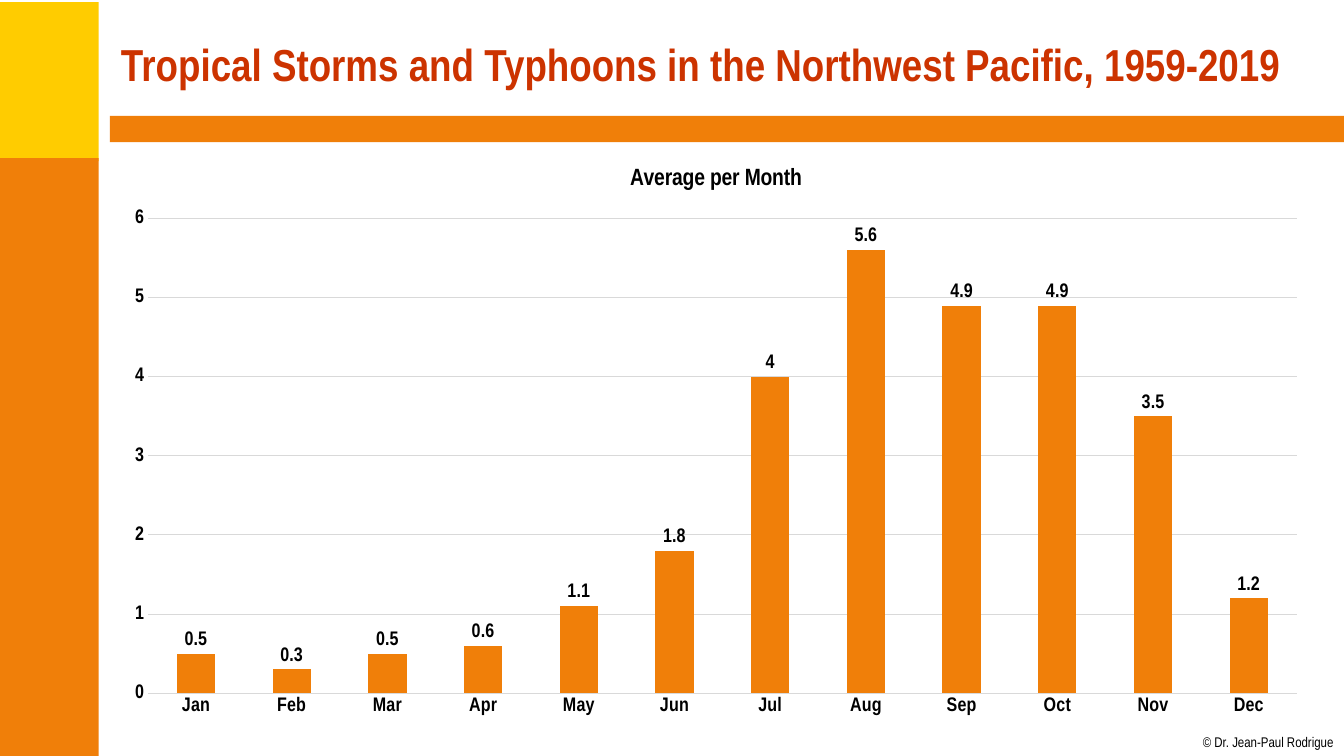
"""Build a slide charting average monthly storms in the Northwest Pacific."""
from dataclasses import dataclass

from pptx import Presentation
from pptx import util as u
from pptx.chart.data import CategoryChartData
from pptx.dml.color import RGBColor
from pptx.enum import chart as ch
from pptx.enum import shapes, text


@dataclass(frozen=True)
class Theme:
    font: str = "Arial Narrow"
    yellow: RGBColor = RGBColor(0xFF, 0xCC, 0x00)
    orange: RGBColor = RGBColor(0xF0, 0x7F, 0x09)
    red: RGBColor = RGBColor(0xCC, 0x33, 0x00)
    black: RGBColor = RGBColor(0, 0, 0)
    grid: RGBColor = RGBColor(0xD9, 0xD9, 0xD9)
    title_size: float = 32
    chart_title_size: float = 16.8
    chart_size: float = 14
    credit_size: float = 10


theme = Theme()


def style(font, size, color, bold=True):
    font.name = theme.font
    font.size = u.Pt(size)
    font.bold = bold
    font.color.rgb = color


deck = Presentation()
deck.slide_width, deck.slide_height = u.Inches(13.33), u.Inches(7.5)
page = deck.slides.add_slide(deck.slide_layouts[5])

bands = [
    (-0.02, 0.02, 1, 1.58, theme.yellow),
    (-0.02, 1.57, 1, 5.93, theme.orange),
    (1.09, 1.15, 12.24, 0.26, theme.orange),
]
for *place, color in bands:
    band = page.shapes.add_shape(shapes.MSO_SHAPE.RECTANGLE, *map(u.Inches, place))
    band.shadow.inherit = False
    band.fill.solid()
    band.fill.fore_color.rgb = color
    band.line.fill.background()

credit = page.shapes.add_textbox(*map(u.Inches, (11.93, 7.28, 1.31, 0.17)))
frame = credit.text_frame
frame.margin_left = frame.margin_right = frame.margin_top = frame.margin_bottom = 0
frame.word_wrap = False
frame.auto_size = text.MSO_AUTO_SIZE.SHAPE_TO_FIT_TEXT
frame.text = "© Dr. Jean-Paul Rodrigue"
style(frame.paragraphs[0].font, theme.credit_size, theme.black, bold=False)

title = page.shapes.title
title.left, title.top, title.width, title.height = map(u.Inches, (1.1, 0.11, 12, 1.04))
title.text_frame.text = "Tropical Storms and Typhoons in the Northwest Pacific, 1959-2019"
title.text_frame.auto_size = text.MSO_AUTO_SIZE.NONE
title.text_frame.vertical_anchor = text.MSO_ANCHOR.MIDDLE
heading = title.text_frame.paragraphs[0]
heading.alignment = text.PP_ALIGN.LEFT
style(heading.font, theme.title_size, theme.red)

storms = CategoryChartData()
storms.categories = ["Jan", "Feb", "Mar", "Apr", "May", "Jun",
                     "Jul", "Aug", "Sep", "Oct", "Nov", "Dec"]
storms.add_series("Average per Month",
                  [0.5, 0.3, 0.5, 0.6, 1.1, 1.8, 4, 5.6, 4.9, 4.9, 3.5, 1.2])
chart = page.shapes.add_chart(ch.XL_CHART_TYPE.COLUMN_CLUSTERED,
                              *map(u.Inches, (1.1, 1.43, 12, 5.79)), storms).chart
style(chart.font, theme.chart_size, theme.black)
chart.has_legend = False
chart.has_title = True
chart.chart_title.include_in_layout = False
chart.chart_title.text_frame.text = "Average per Month"
style(chart.chart_title.text_frame.paragraphs[0].font, theme.chart_title_size, theme.black)

months, counts = chart.category_axis, chart.value_axis
for axis in (months, counts):
    axis.major_tick_mark = axis.minor_tick_mark = ch.XL_TICK_MARK.NONE
    style(axis.tick_labels.font, theme.chart_size, theme.black)
counts.minimum_scale, counts.maximum_scale, counts.major_unit = 0, 6, 1
counts.has_major_gridlines = True
counts.format.line.fill.background()
for line in (months.format.line, counts.major_gridlines.format.line):
    line.color.rgb = theme.grid
    line.width = u.Pt(0.75)

plot = chart.plots[0]
plot.vary_by_categories = False
plot.gap_width, plot.overlap = 150, -27
bars = plot.series[0]
bars.format.fill.solid()
bars.format.fill.fore_color.rgb = theme.orange
labels = bars.data_labels
labels.show_value = True
labels.position = ch.XL_LABEL_POSITION.OUTSIDE_END
style(labels.font, theme.chart_size, theme.black)

deck.save("out.pptx")
